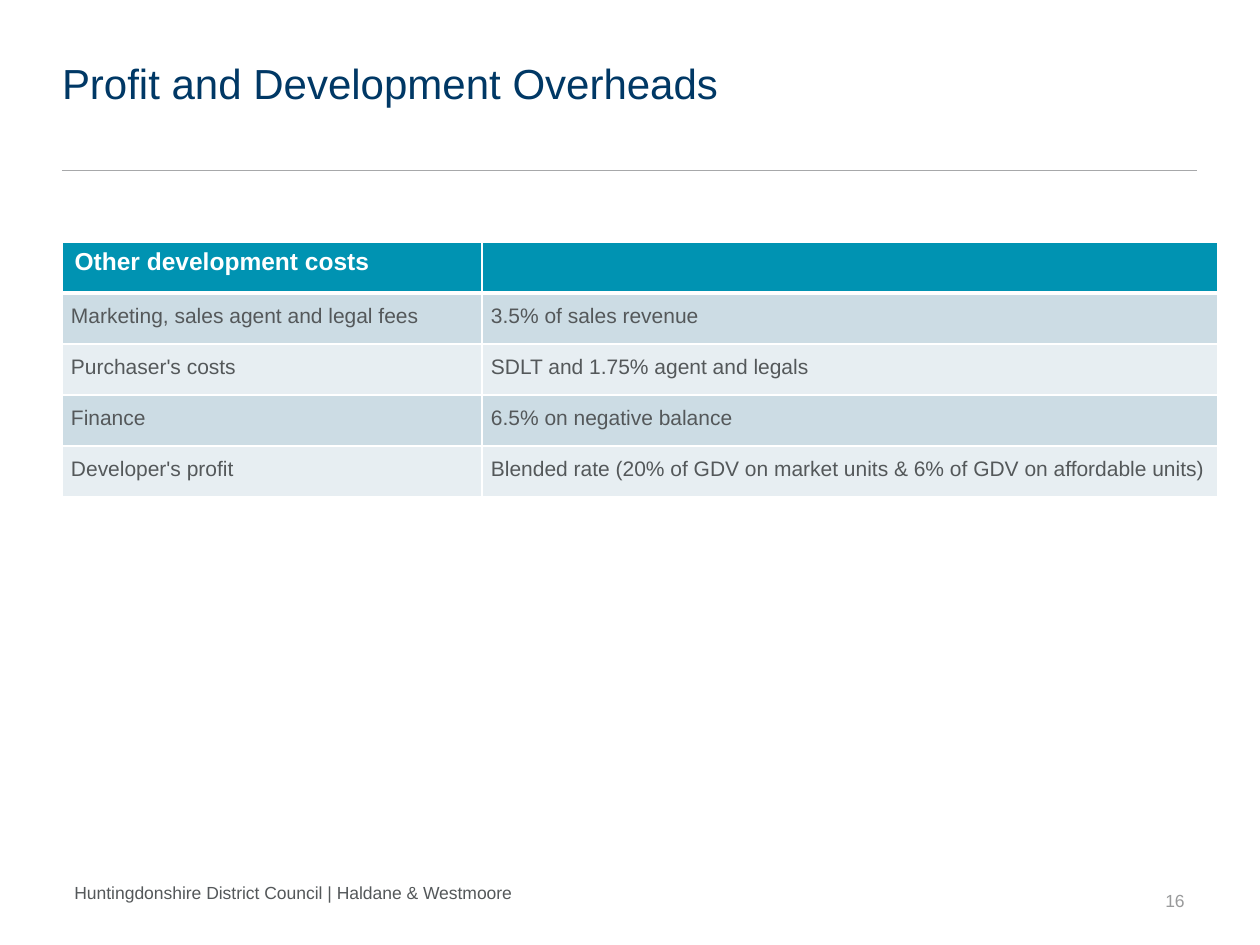
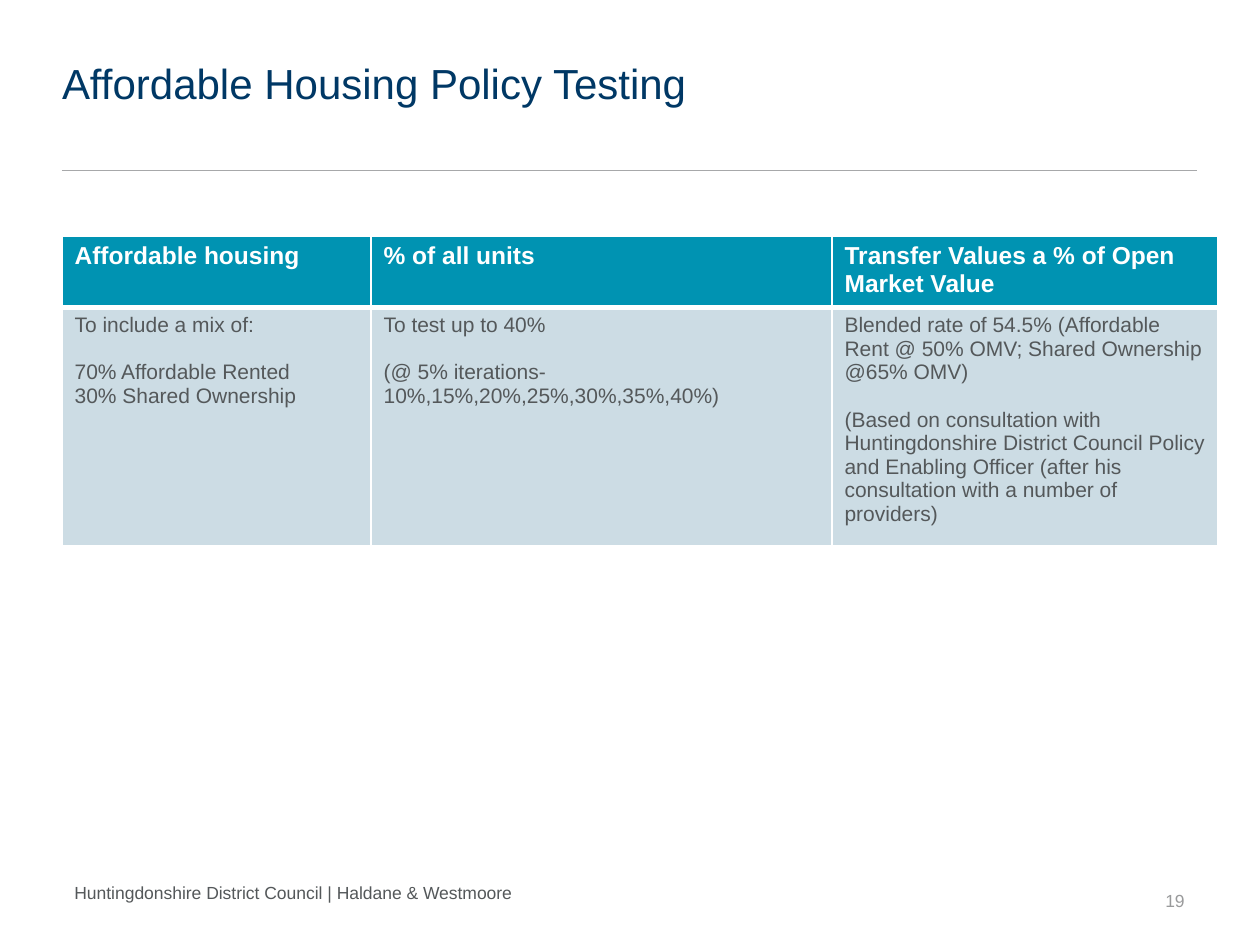
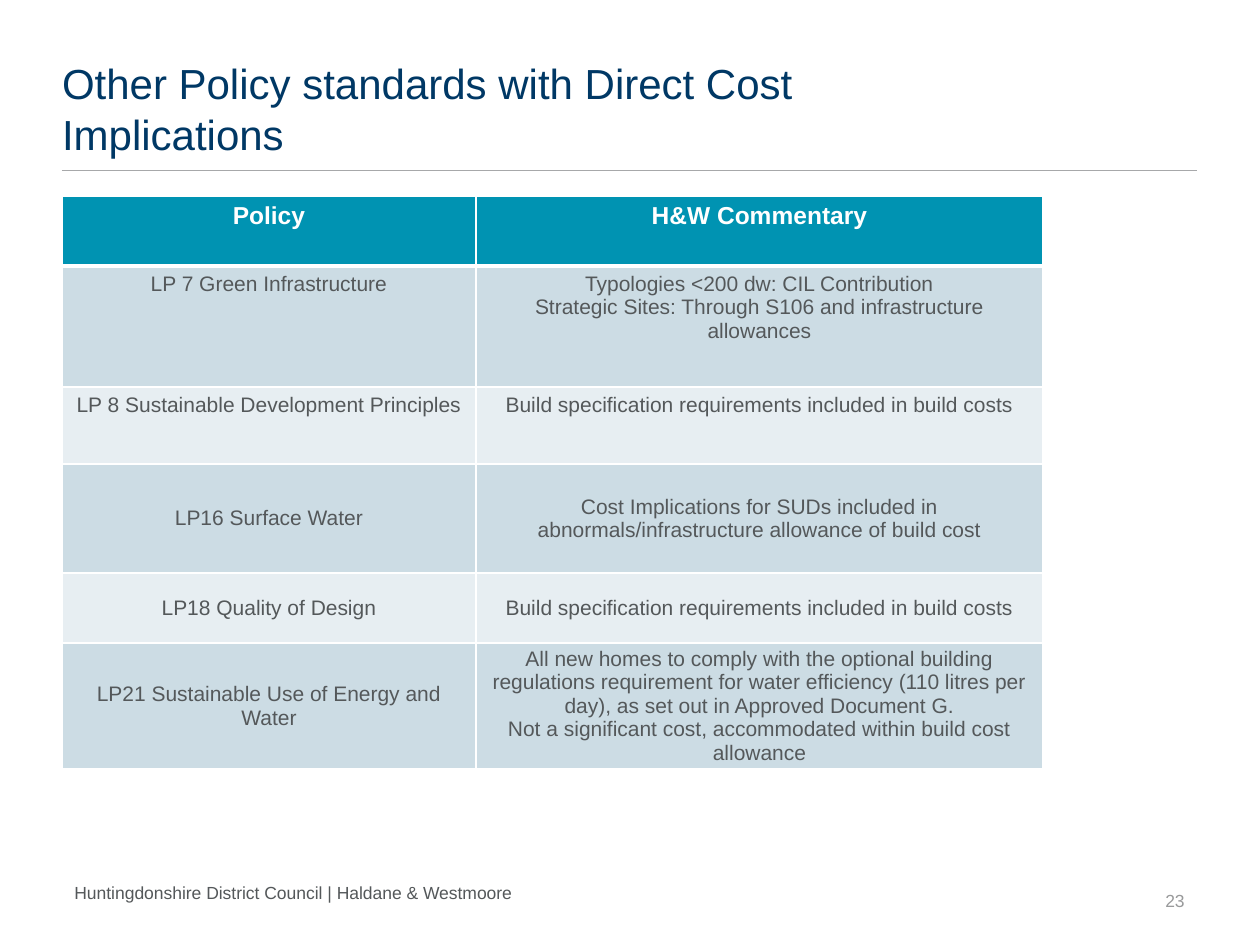
import dataclasses

import lxml.etree
import pptx
import pptx.dml.color
import pptx.enum.shapes
import pptx.enum.text
import pptx.oxml.ns
import pptx.util

ALIGN = pptx.enum.text.PP_ALIGN
ANCHOR = pptx.enum.text.MSO_ANCHOR

FOOTER = "Huntingdonshire District Council | Haldane & Westmoore"

SLIDES = [
    {
        "title": "Profit and Development Overheads",
        "number": "16",
        "top": 242,
        "columns": [420, 736],
        "heights": [51, 51, 51, 51, 51],
        "compact_from": 1,
        "line_spacing": 11,
        "align": ALIGN.LEFT,
        "rows": [
            ("Other development costs", ""),
            ("Marketing, sales agent and legal fees", "3.5% of sales revenue"),
            ("Purchaser's costs", "SDLT and 1.75% agent and legals"),
            ("Finance", "6.5% on negative balance"),
            ("Developer's profit",
             "Blended rate (20% of GDV on market units & 6% of GDV on affordable units)"),
        ],
    },
    {
        "title": "Affordable Housing Policy Testing",
        "number": "19",
        "top": 236,
        "columns": [309, 461, 386],
        "heights": [67, 224],
        "compact_from": 2,
        "line_spacing": None,
        "align": ALIGN.LEFT,
        "rows": [
            ("Affordable housing", "% of all units", "Transfer Values a % of Open Market Value"),
            ("To include a mix of:\n\n70% Affordable Rented\n30% Shared Ownership",
             "To test up to 40%\n\n(@ 5% iterations- 10%,15%,20%,25%,30%,35%,40%)",
             "Blended rate of 54.5% (Affordable Rent @ 50% OMV; Shared Ownership @65% OMV)\n\n"
             "(Based on consultation with Huntingdonshire District Council Policy and Enabling "
             "Officer (after his consultation with a number of providers)"),
        ],
    },
    {
        "title": "Other Policy standards with Direct Cost Implications",
        "number": "23",
        "top": 196,
        "columns": [414, 567],
        "heights": [70, 121, 77, 109, 70, 117],
        "compact_from": 3,
        "line_spacing": None,
        "align": ALIGN.CENTER,
        "rows": [
            ("Policy", "H&W Commentary"),
            ("LP 7 Green Infrastructure",
             "Typologies <200 dw: CIL Contribution\n"
             "Strategic Sites: Through S106 and infrastructure allowances"),
            ("LP 8 Sustainable Development Principles",
             "Build specification requirements included in build costs"),
            ("LP16 Surface Water",
             "Cost Implications for SUDs included in abnormals/infrastructure allowance of build cost"),
            ("LP18 Quality of Design",
             "Build specification requirements included in build costs"),
            ("LP21 Sustainable Use of Energy and Water",
             "All new homes to comply with the optional building regulations requirement for water "
             "efficiency (110 litres per day), as set out in Approved Document G.\n"
             "Not a significant cost, accommodated within build cost allowance"),
        ],
    },
]


@dataclasses.dataclass(frozen=True)
class Theme:
    font: str = "Arial"
    title: str = "003865"
    body: str = "54585A"
    number: str = "999A9B"
    rule: str = "A7A8AA"
    header: str = "0093B2"
    bands: tuple = ("CCDCE4", "E7EEF2")
    white: str = "FFFFFF"
    title_size: int = 24
    header_size: int = 14
    body_size: int = 12
    small_size: int = 10
    block_gap: float = 13.5
    rule_width: float = 0.5
    border: int = 1
    header_border: int = 3


THEME = Theme()
LEFT, RIGHT = 62, 1197
COMPACT = {"margin_left": 9, "margin_right": 9, "margin_top": 0, "margin_bottom": 0}
FLUSH = dict.fromkeys(COMPACT, 0)


def px(value):
    return pptx.util.Emu(round(value * 914400 / 126))


def rgb(value):
    return pptx.dml.color.RGBColor.from_string(value)


def apply(target, values):
    for name, value in values.items():
        setattr(target, name, value)


def set_margins(target, margins):
    apply(target, {name: px(value) for name, value in margins.items()})


def write(text_frame, text, size, color, bold=False, align=ALIGN.LEFT, spacing=None):
    text_frame.word_wrap = True
    for index, block in enumerate(text.split("\n\n")):
        for position, line in enumerate(block.split("\n")):
            first = index == position == 0
            paragraph = text_frame.paragraphs[0] if first else text_frame.add_paragraph()
            paragraph.alignment = align
            if spacing:
                paragraph.line_spacing = pptx.util.Pt(spacing)
            if index and not position:
                paragraph.space_before = pptx.util.Pt(THEME.block_gap)
            if line:
                run = paragraph.add_run()
                run.text = line
                apply(run.font, {"name": THEME.font, "size": pptx.util.Pt(size), "bold": bold})
                run.font.color.rgb = rgb(color)


def add_text(slide, box, text, size, color, align=ALIGN.LEFT, anchor=ANCHOR.TOP, margins=None):
    text_frame = slide.shapes.add_textbox(*map(px, box)).text_frame
    text_frame.vertical_anchor = anchor
    set_margins(text_frame, margins or {})
    write(text_frame, text, size, color, align=align)


def add_frame(slide, title, number):
    rule = slide.shapes.add_connector(
        pptx.enum.shapes.MSO_CONNECTOR.STRAIGHT, px(LEFT), px(170), px(RIGHT), px(170))
    rule.line.color.rgb = rgb(THEME.rule)
    rule.line.width = pptx.util.Pt(THEME.rule_width)
    lxml.etree.SubElement(rule._element.spPr, pptx.oxml.ns.qn("a:effectLst"))
    add_text(slide, (LEFT, 876, 513, 34), FOOTER, THEME.small_size, THEME.body)
    add_text(slide, (LEFT, 58, 852, 52), title, THEME.title_size, THEME.title, margins=FLUSH)
    add_text(slide, (RIGHT - 83, 876, 83, 50), number, THEME.small_size, THEME.number,
             ALIGN.RIGHT, ANCHOR.MIDDLE)


def set_borders(cell, widths):
    properties = cell._tc.get_or_add_tcPr()
    for index, (side, width) in enumerate(widths.items()):
        line = lxml.etree.Element(pptx.oxml.ns.qn("a:ln" + side), w=str(pptx.util.Pt(width)))
        fill = lxml.etree.SubElement(line, pptx.oxml.ns.qn("a:solidFill"))
        lxml.etree.SubElement(fill, pptx.oxml.ns.qn("a:srgbClr"), val=THEME.white)
        properties.insert(index, line)


def add_costs_table(slide, content):
    rows, columns, heights = content["rows"], content["columns"], content["heights"]
    box = (LEFT, content["top"], sum(columns), sum(heights))
    table = slide.shapes.add_table(len(rows), len(columns), *map(px, box)).table
    apply(table, {"first_row": False, "horz_banding": False})
    for column, width in zip(table.columns, columns):
        column.width = px(width)
    for row_index, texts in enumerate(rows):
        table.rows[row_index].height = px(heights[row_index])
        header = row_index == 0
        compact = row_index >= content["compact_from"]
        fill = THEME.header if header else THEME.bands[(row_index - 1) % 2]
        size, color = ((THEME.header_size, THEME.white) if header
                       else (THEME.body_size, THEME.body))
        borders = dict.fromkeys("LRTB", THEME.border)
        if row_index < 2:
            borders["B" if header else "T"] = THEME.header_border
        for column_index, text in enumerate(texts):
            cell = table.cell(row_index, column_index)
            cell.fill.solid()
            cell.fill.fore_color.rgb = rgb(fill)
            set_borders(cell, borders)
            if compact:
                cell.vertical_anchor = ANCHOR.MIDDLE
                set_margins(cell, COMPACT)
            write(cell.text_frame, text, size, color, header, content["align"],
                  content["line_spacing"] if compact else None)


def main():
    presentation = pptx.Presentation()
    apply(presentation, {"slide_width": px(1260), "slide_height": px(945)})
    for content in SLIDES:
        slide = presentation.slides.add_slide(presentation.slide_layouts[6])
        add_frame(slide, content["title"], content["number"])
        add_costs_table(slide, content)
    presentation.save("out.pptx")


if __name__ == "__main__":
    main()
